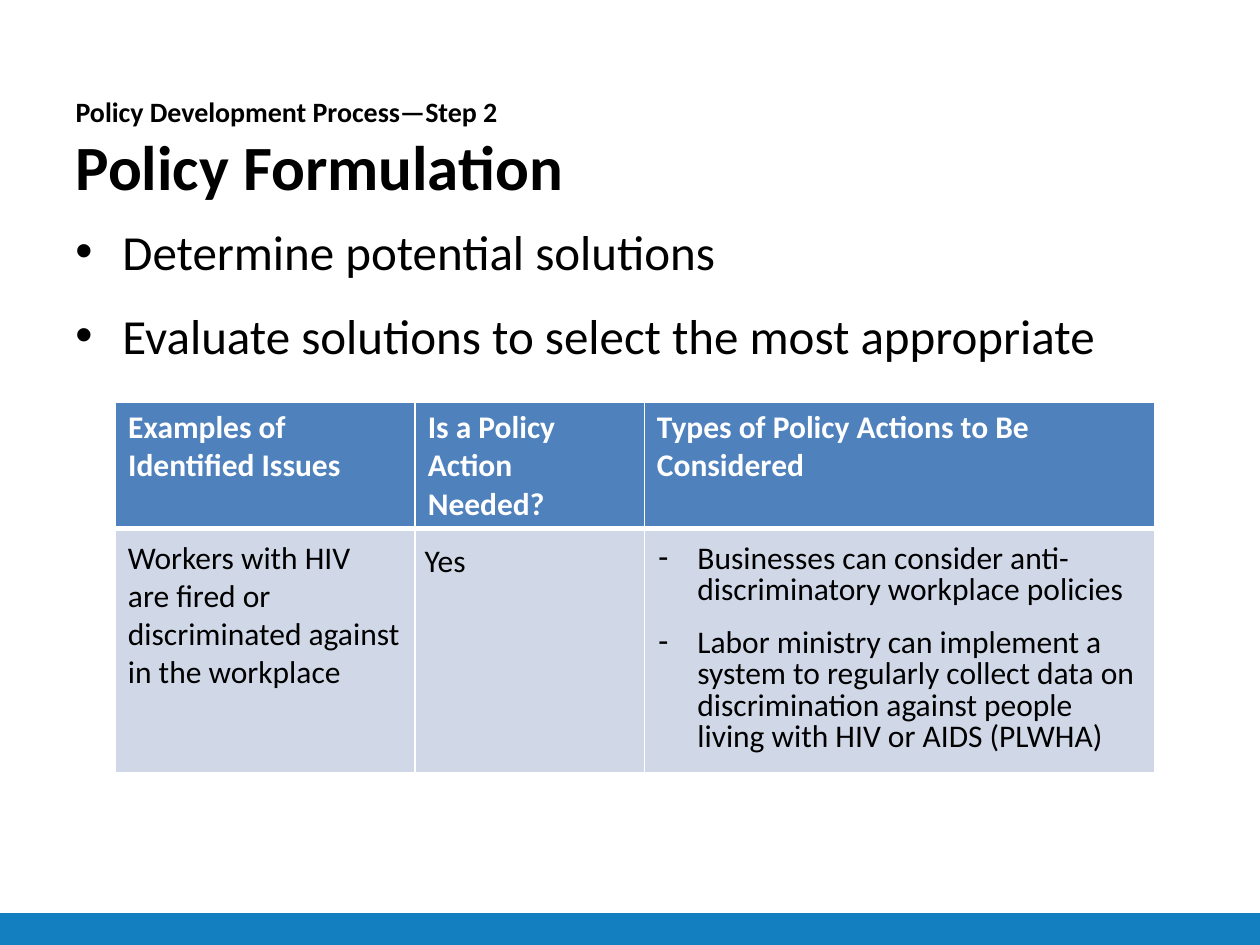
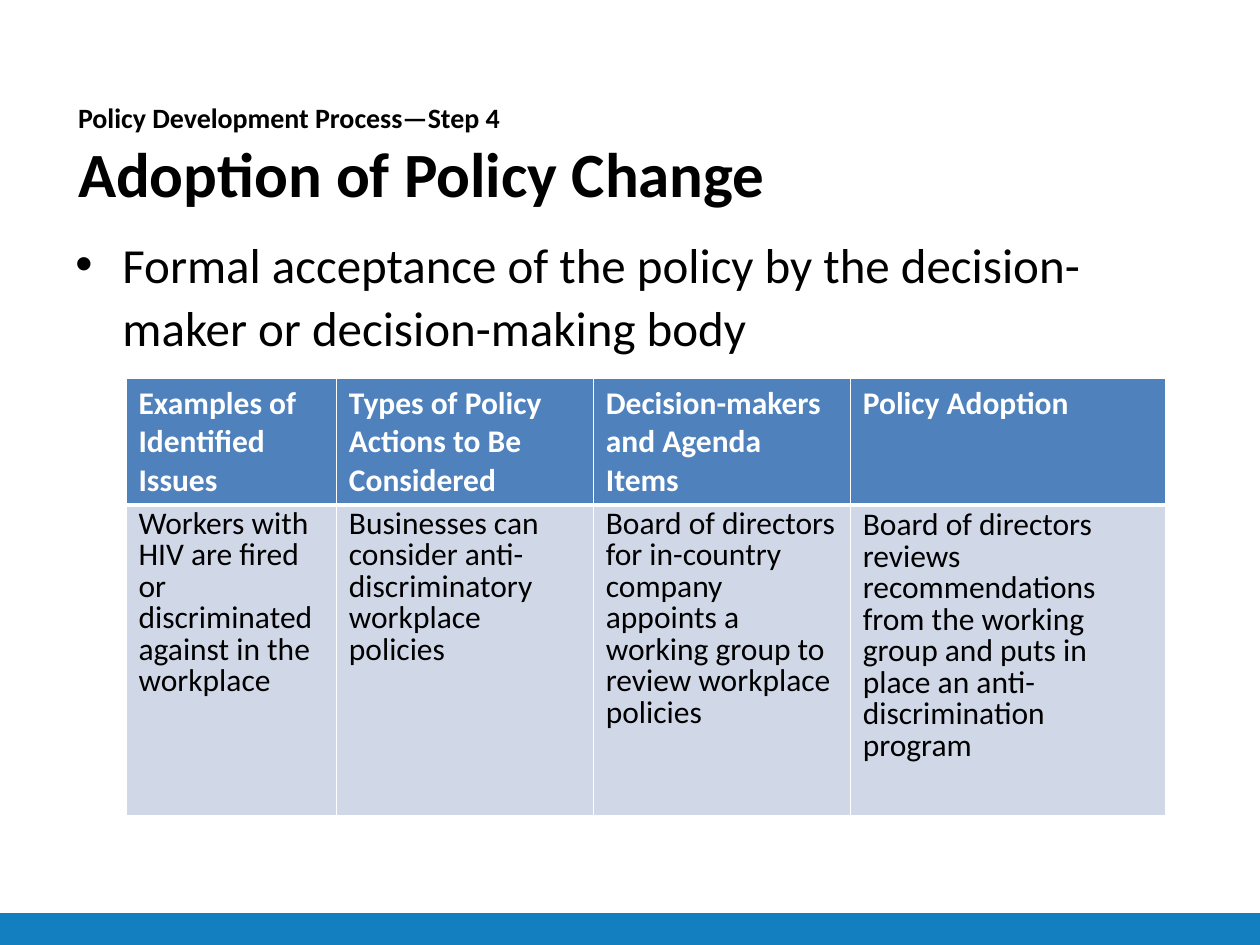
from lxml import etree
from pptx import Presentation
from pptx import util as u
from pptx.dml.color import RGBColor
from pptx.enum import shapes, text
from pptx.oxml.ns import qn

FONT = "Calibri"
COLOURS = {"ink": "000000", "paper": "FFFFFF", "band": "137FC1",
           "header": "4F81BD", "body": "D0D8E8"}
TITLE_ONLY = 5
TIGHT = u.Pt(18)
ADOPTION_COLUMNS = [4.24, 5.18, 5.18, 6.35]

# Each table row is (kind, height, cell texts); each box is (place, lines, spacing, bullet)
SLIDES = [
    {
        "step": "Policy Development Process—Step 2",
        "title": "Policy Formulation",
        "title_at": (1.27, 1.77),
        "points": ["Determine potential solutions",
                   "Evaluate solutions to select the most appropriate"],
        "points_at": (1.27, 4.25, 22.86, 3.35),
        "tables": [
            {"at": (2.33, 8.1), "columns": [6.04, 4.62, 10.29], "rows": [
                ("header", 2.56, ["Examples of Identified Issues",
                                  "Is a Policy Action Needed?",
                                  "Types of Policy Actions to Be Considered"]),
                ("body", 4.92, ["", "", ""])]},
        ],
        "boxes": [
            ((2.33, 10.73, 6.15, 4.1),
             ["Workers with HIV\vare fired or discriminated against in the workplace"],
             None, None),
            ((8.31, 10.78, 3.96, 1.02), ["Yes"], None, None),
            ((13.02, 10.84, 10.26, 4.5),
             ["Businesses can consider anti-discriminatory workplace policies",
              "Labor ministry can implement a system to regularly collect data on "
              "discrimination against people living with HIV or AIDS (PLWHA)"],
             TIGHT, "-"),
        ],
    },
    {
        "step": "Policy Development Process—Step 4",
        "title": "Adoption of Policy Change",
        "title_at": (1.32, 1.9),
        "points": ["Formal acceptance of the policy by the decision- maker "
                   "or decision-making body"],
        "points_at": (1.27, 4.52, 22.86, 2.9),
        "tables": [
            {"at": (2.54, 7.62), "columns": ADOPTION_COLUMNS, "rows": [
                ("header", 2.56, ["Examples of Identified Issues",
                                  "Types of Policy Actions to Be Considered",
                                  "Decision-makers and Agenda Items",
                                  "Policy Adoption"]),
                ("body", 6.27, [
                    "Workers with HIV are fired or discriminated against in the workplace",
                    "Businesses can consider anti-discriminatory workplace policies",
                    "Board of directors for in-country company appoints a working group "
                    "to review workplace policies",
                    ""])]},
            {"at": (2.54, 10.21), "columns": ADOPTION_COLUMNS, "rows": [
                ("clear", 6.27, [
                    "", "", "",
                    "Board of directors reviews recommendations from the working group "
                    "and puts in place an anti-discrimination program"])]},
        ],
        "boxes": [],
    },
]

# Border widths in points: left, right, top, bottom
BORDERS = {"header": (1, 1, 1, 3), "body": (1, 1, 3, 1), "clear": (1, 1, 1, 3)}


def style_font(font, size, colour="ink", bold=False):
    font.name = FONT
    font.size = u.Pt(size)
    font.bold = bold
    font.color.rgb = RGBColor.from_string(COLOURS[colour])


def add_text(page, place, lines, size, spacing, bullet, indent):
    box = page.shapes.add_textbox(*[u.Cm(length) for length in place])
    box.text_frame.word_wrap = True
    for number, line in enumerate(lines):
        para = box.text_frame.add_paragraph() if number else box.text_frame.paragraphs[0]
        para.text = line
        if spacing:
            para.line_spacing = spacing
        if number:
            para.space_before = u.Pt(12)
        if bullet:
            properties = para._p.get_or_add_pPr()
            properties.set("marL", str(u.Cm(indent)))
            properties.set("indent", str(-u.Cm(indent)))
            etree.SubElement(properties, qn("a:buFont")).set("typeface", "Arial")
            etree.SubElement(properties, qn("a:buChar")).set("char", bullet)
        style_font(para.font, size)


deck = Presentation()
deck.slide_width, deck.slide_height = u.Cm(25.4), u.Cm(19.05)

for content in SLIDES:
    page = deck.slides.add_slide(deck.slide_layouts[TITLE_ONLY])

    # Bottom band
    band = page.shapes.add_shape(shapes.MSO_SHAPE.RECTANGLE, 0, u.Cm(18.41),
                                 deck.slide_width, u.Cm(0.64))
    band.shadow.inherit = False
    band.fill.solid()
    band.fill.fore_color.rgb = RGBColor.from_string(COLOURS["band"])
    band.line.fill.background()

    # Title with the step above it
    title = page.shapes.title
    title.left, title.top = [u.Cm(length) for length in content["title_at"]]
    title.width, title.height = u.Cm(22.86), u.Cm(2.5)
    title.text_frame.vertical_anchor = text.MSO_ANCHOR.TOP
    title.text_frame.auto_size = text.MSO_AUTO_SIZE.NONE
    para = title.text_frame.paragraphs[0]
    para.alignment = text.PP_ALIGN.LEFT
    span = para.add_run()
    span.text = content["step"]
    style_font(span.font, 16, bold=True)
    para.add_line_break()
    span = para.add_run()
    span.text = content["title"]
    style_font(span.font, 36, bold=True)

    # Main points
    add_text(page, content["points_at"], content["points"], 28, u.Pt(36), "•", 0.95)

    # Example tables
    for plan in content["tables"]:
        left, top = plan["at"]
        columns, rows = plan["columns"], plan["rows"]
        height = sum(row[1] for row in rows)
        table = page.shapes.add_table(len(rows), len(columns), u.Cm(left), u.Cm(top),
                                      u.Cm(sum(columns)), u.Cm(height)).table
        for column, width in zip(table.columns, columns):
            column.width = u.Cm(width)
        for row, (kind, row_height, words) in zip(table.rows, rows):
            row.height = u.Cm(row_height)
            for cell, wording in zip(row.cells, words):
                para = cell.text_frame.paragraphs[0]
                if wording:
                    para.text = wording
                if kind == "header":
                    style_font(para.font, 18, "paper", bold=True)
                else:
                    para.line_spacing = TIGHT
                    style_font(para.font, 18)

                # Cell borders, then fill
                properties = cell._tc.get_or_add_tcPr()
                for side, width in zip("LRTB", BORDERS[kind]):
                    border = etree.SubElement(properties, qn("a:ln" + side))
                    border.set("w", str(u.Pt(width)))
                    paint = etree.SubElement(border, qn("a:solidFill"))
                    etree.SubElement(paint, qn("a:srgbClr")).set("val", COLOURS["paper"])
                if kind == "clear":
                    cell.fill.background()
                else:
                    cell.fill.solid()
                    cell.fill.fore_color.rgb = RGBColor.from_string(COLOURS[kind])

    # Text over the table's body row
    for place, lines, spacing, bullet in content["boxes"]:
        add_text(page, place, lines, 18, spacing, bullet, 0.79)

deck.save("out.pptx")
